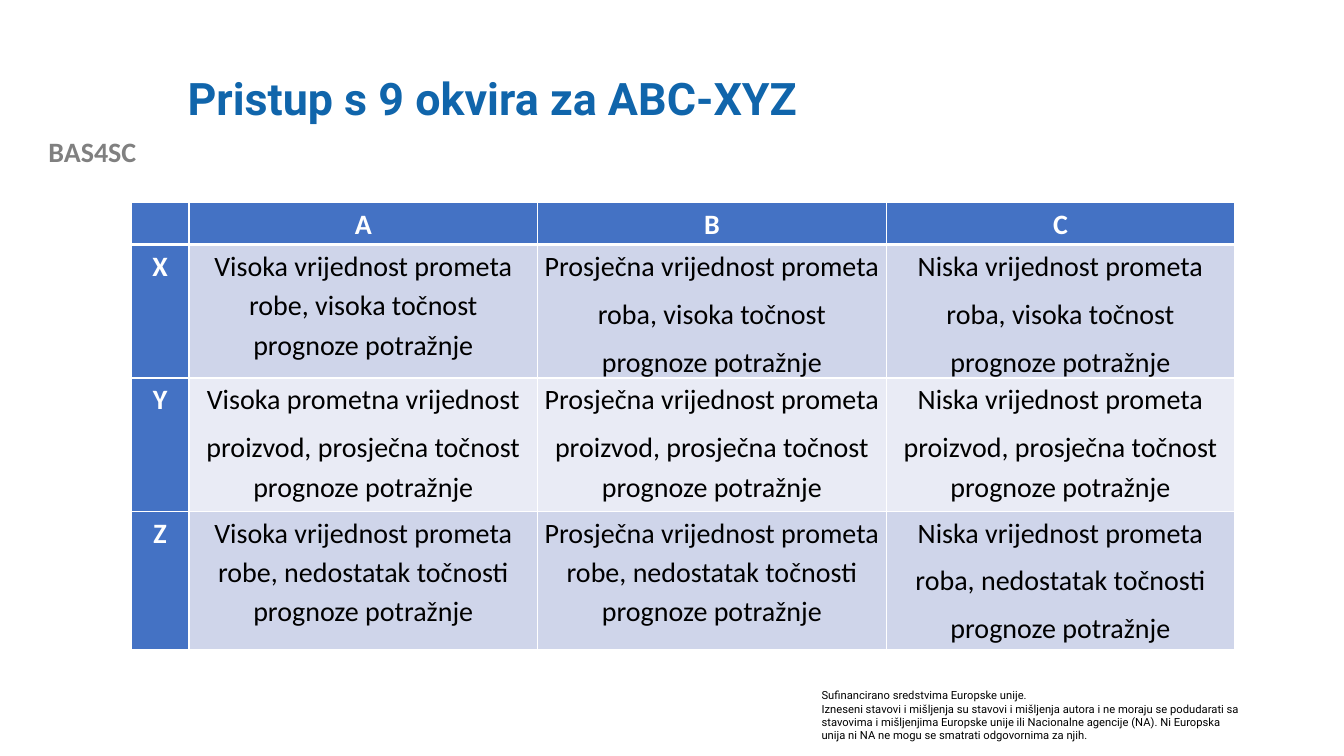
from lxml import etree
from pptx import Presentation
from pptx.dml.color import RGBColor
from pptx.enum.text import MSO_ANCHOR, MSO_AUTO_SIZE, PP_ALIGN
from pptx.oxml.ns import qn
from pptx.util import Emu, Pt

LEFT, CENTER = PP_ALIGN.LEFT, PP_ALIGN.CENTER
MIDDLE = MSO_ANCHOR.MIDDLE
NO_AUTOFIT = MSO_AUTO_SIZE.NONE
TITLE_ONLY = 5

BLUE, WHITE, BLACK = "4472C4", "FFFFFF", "000000"
ROW_FILLS = ["CFD5EA", "E9EBF5"]
COLUMN_WIDTHS = [55, 332, 332, 332]
ROW_HEIGHTS = [40, 127, 127, 132]
MATRIX = [
    ["", "A", "B", "C"],
    ["X",
     "Visoka vrijednost prometa robe, visoka točnost prognoze potražnje",
     "Prosječna vrijednost prometa\nroba, visoka točnost\nprognoze potražnje",
     "Niska vrijednost prometa\nroba, visoka točnost\nprognoze potražnje"],
    ["Y",
     "Visoka prometna vrijednost\nproizvod, prosječna točnost prognoze potražnje",
     "Prosječna vrijednost prometa\nproizvod, prosječna točnost prognoze potražnje",
     "Niska vrijednost prometa\nproizvod, prosječna točnost prognoze potražnje"],
    ["Z",
     "Visoka vrijednost prometa robe, nedostatak točnosti prognoze potražnje",
     "Prosječna vrijednost prometa robe, nedostatak točnosti prognoze potražnje",
     "Niska vrijednost prometa\nroba, nedostatak točnosti\nprognoze potražnje"],
]
DISCLAIMER = (
    "Sufinancirano sredstvima Europske unije.\n"
    "Izneseni stavovi i mišljenja su stavovi i mišljenja autora i ne moraju se "
    "podudarati sa stavovima i mišljenjima Europske unije ili Nacionalne agencije "
    "(NA). Ni Europska unija ni NA ne mogu se smatrati odgovornima za njih."
)


def px(length):
    return Emu(length * 9525)


def color(value):
    return RGBColor.from_string(value)


def write(frame, text, font, size, ink, bold=False, align=LEFT, spacing=1.0, after=0):
    frame.word_wrap = True
    frame.text = text
    for para in frame.paragraphs:
        para.alignment = align
        para.line_spacing = spacing
        para.space_after = Pt(after)
        for span in para.runs:
            span.font.name = font
            span.font.size = Pt(size)
            span.font.bold = bold
            span.font.color.rgb = color(ink)


def add_title(page, text):
    title = page.shapes.title
    title.left, title.top, title.width, title.height = map(px, (169, 38, 1031, 117))
    write(title.text_frame, text, "Roboto", 32, "1065AB", bold=True, spacing=0.9)
    title.text_frame.vertical_anchor = MIDDLE
    title.text_frame.auto_size = NO_AUTOFIT


def add_text(page, bounds, text, font, size, ink, **options):
    box = page.shapes.add_textbox(*map(px, bounds))
    write(box.text_frame, text, font, size, ink, **options)


def add_borders(cell, bottom):
    properties = cell._tc.get_or_add_tcPr()
    for side, points in (("L", 1), ("R", 1), ("T", 1), ("B", bottom)):
        line = etree.SubElement(properties, qn(f"a:ln{side}"), w=str(Pt(points)))
        fill = etree.SubElement(line, qn("a:solidFill"))
        etree.SubElement(fill, qn("a:srgbClr"), val=WHITE)


def fill_cell(cell, text, row, column):
    heading = row == 0 or column == 0
    add_borders(cell, 3 if row == 0 else 1)
    cell.fill.solid()
    cell.fill.fore_color.rgb = color(BLUE if heading else ROW_FILLS[(row - 1) % 2])
    cell.margin_left = cell.margin_right = px(6)
    cell.margin_top = cell.margin_bottom = 0
    write(cell.text_frame, text, "Calibri", 20, WHITE if heading else BLACK,
          bold=heading, align=CENTER, spacing=1.15, after=6)


def add_matrix(page):
    bounds = (125, 193, sum(COLUMN_WIDTHS), sum(ROW_HEIGHTS))
    table = page.shapes.add_table(
        len(ROW_HEIGHTS), len(COLUMN_WIDTHS), *map(px, bounds)).table
    table.first_col = True
    for column, width in zip(table.columns, COLUMN_WIDTHS):
        column.width = px(width)
    for row, height in zip(table.rows, ROW_HEIGHTS):
        row.height = px(height)
    for row, texts in enumerate(MATRIX):
        for column, text in enumerate(texts):
            fill_cell(table.cell(row, column), text, row, column)


def main():
    deck = Presentation()
    deck.slide_width, deck.slide_height = px(1280), px(720)
    page = deck.slides.add_slide(deck.slide_layouts[TITLE_ONLY])
    add_text(page, (0, 123, 176, 42), "BAS4SC", "Calibri", 20, "808080",
             bold=True, align=CENTER)
    add_text(page, (773, 651, 420, 61), DISCLAIMER, "Roboto", 8, BLACK)
    add_title(page, "Pristup s 9 okvira za ABC-XYZ")
    add_matrix(page)
    deck.save("out.pptx")


if __name__ == "__main__":
    main()
